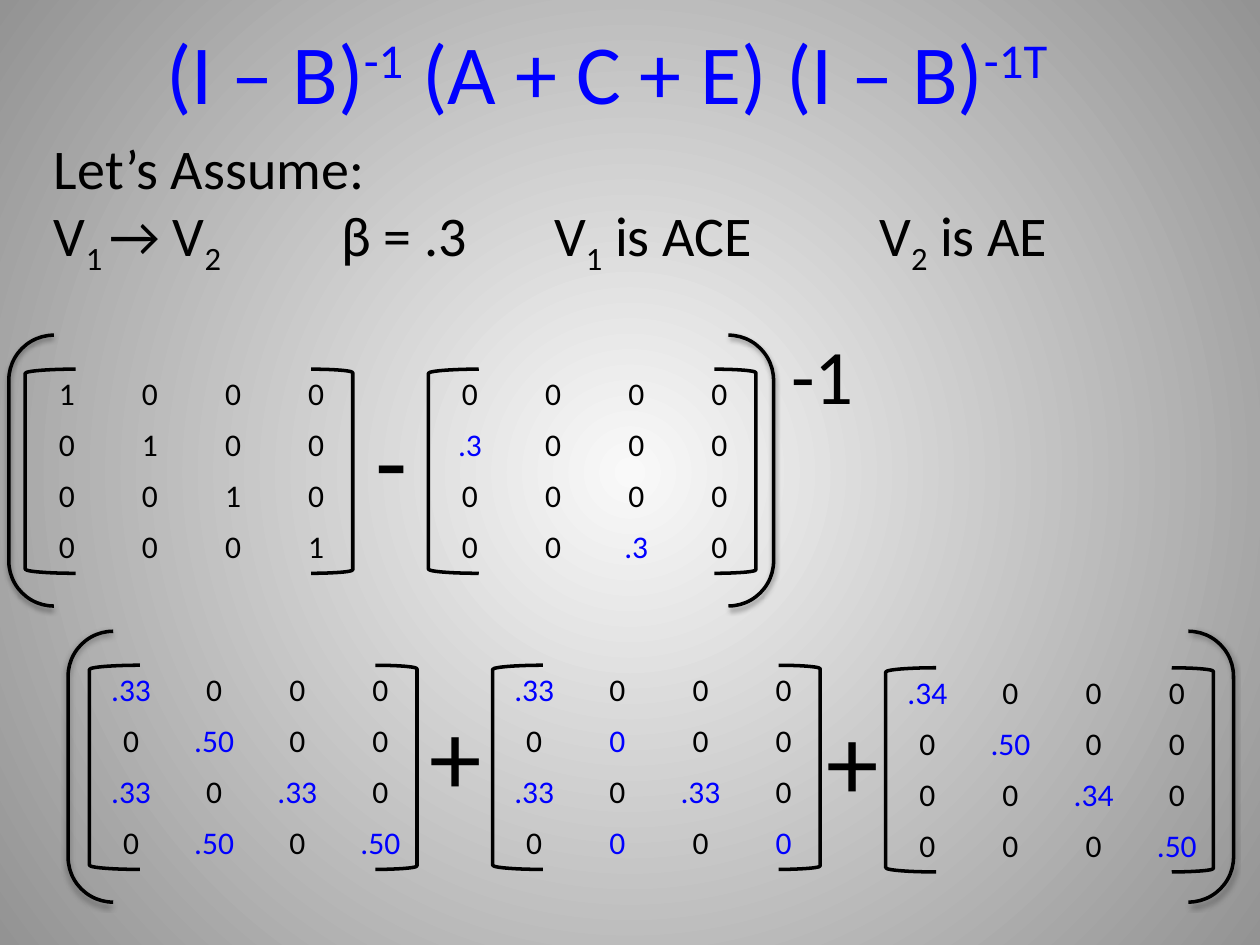
"""Build a slide of variance matrices for a two-variable causal model."""
import lxml.etree
import pptx
import pptx.dml.color
import pptx.enum.shapes
import pptx.enum.text
import pptx.oxml
import pptx.oxml.ns
import pptx.util

Inches = pptx.util.Inches
SHAPES = pptx.enum.shapes.MSO_SHAPE
COLORS = {"ink": "000000", "accent": "0000FF", "center": "F9F9F9", "edge": "939393"}
FONT = "Calibri"
NAMESPACE = pptx.oxml.ns.nsdecls("a", "p")
NO_GRID_STYLE = "{2D5ABB26-0587-4C30-8999-92F81FD0307C}"
CELL_WIDTH, MATRIX_HEIGHT = 0.66, 1.62
LEFT_BRACKET_WIDTH, RIGHT_BRACKET_WIDTH, RIGHT_BRACKET_OFFSET = 0.4, 0.33, 2.27
PAIR_HEIGHT = 2.15
SUPER, SUB = 30, -25

TITLE = [[("(I – B)", 0), ("-1", SUPER), (" (A + C + E) (I – B)", 0), ("-1T", SUPER)]]
ASSUMPTIONS = [
    [("Let’s Assume:", 0)],
    [("V", 0), ("1 ", SUB), ("→ V", 0), ("2", SUB), ("\tβ = .3\tV", 0), ("1", SUB),
     (" is ACE\tV", 0), ("2", SUB), (" is AE", 0)],
]
ASSUMPTION_TABS = (2.28, 3.97, 6.55)

MATRICES = [
    {"at": (0.2, 2.93), "rows": ["1 0 0 0", "0 1 0 0", "0 0 1 0", "0 0 0 1"]},
    {"at": (3.4, 2.93), "rows": ["0 0 0 0", ".3 0 0 0", "0 0 0 0", "0 0 .3 0"]},
    {"at": (0.71, 5.28), "rows": [".33 0 0 0", "0 .50 0 0", ".33 0 .33 0", "0 .50 0 .50"]},
    {"at": (3.91, 5.28), "rows": [".33 0 0 0", "0 0 0 0", ".33 0 .33 0", "0 0 0 0"],
     "blue_zeros": {(1, 1), (3, 1), (3, 3)}},
    {"at": (7.03, 5.3), "rows": [".34 0 0 0", "0 .50 0 0", "0 0 .34 0", "0 0 0 .50"]},
]
OPERATORS = [
    ("-", (2.88, 3.08, 0.46, 1.11), 60),
    ("-1", (6.18, 2.55, 0.7, 0.84), 44),
    ("+", (3.31, 5.43, 0.62, 1.11), 60),
    ("+", (6.46, 5.47, 0.62, 1.11), 60),
]
BRACKET_PAIRS = [(0.07, 2.66, 6.07), (0.54, 5.01, 9.25)]


def rgb(name):
    return pptx.dml.color.RGBColor.from_string(COLORS[name])


def write_text(frame, paragraphs, size=18, color="ink", align=None, tabs=()):
    for index, pieces in enumerate(paragraphs):
        para = frame.add_paragraph() if index else frame.paragraphs[0]
        para.alignment = align
        if tabs:
            tab_list = lxml.etree.SubElement(
                para._p.get_or_add_pPr(), pptx.oxml.ns.qn("a:tabLst"))
            for tab in tabs:
                lxml.etree.SubElement(tab_list, pptx.oxml.ns.qn("a:tab"),
                                      pos=str(Inches(tab)), algn="l")
        for text, baseline in pieces:
            span = para.add_run()
            span.text = text
            span.font.name = FONT
            span.font.size = pptx.util.Pt(size)
            span.font.color.rgb = rgb(color)
            if baseline:
                span.font._element.set("baseline", str(baseline * 1000))


def add_text(page, at, paragraphs, wrap=False, **style):
    box = page.shapes.add_textbox(*map(Inches, at))
    box.text_frame.word_wrap = wrap
    box.text_frame.auto_size = pptx.enum.text.MSO_AUTO_SIZE.SHAPE_TO_FIT_TEXT
    write_text(box.text_frame, paragraphs, **style)


def add_bracket(page, kind, at, shadow=False):
    bracket = page.shapes.add_shape(kind, *map(Inches, at))
    bracket.fill.background()
    bracket.line.color.rgb = rgb("ink")
    bracket.line.width = pptx.util.Pt(2)
    bracket.shadow.inherit = False
    if shadow:
        effects = bracket._element.spPr.find(pptx.oxml.ns.qn("a:effectLst"))
        effects.append(pptx.oxml.parse_xml(
            f'<a:outerShdw {NAMESPACE} blurRad="40000" dist="20000" dir="5400000" '
            f'rotWithShape="0"><a:srgbClr val="{COLORS["ink"]}">'
            '<a:alpha val="38000"/></a:srgbClr></a:outerShdw>'))


def add_matrix(page, at, rows, blue_zeros=frozenset()):
    left, top = at
    values = [row.split() for row in rows]
    count = len(values)
    table = page.shapes.add_table(
        count, count, Inches(left), Inches(top),
        Inches(CELL_WIDTH * count), Inches(MATRIX_HEIGHT)).table
    table.first_row = table.horz_banding = False
    table._tbl.tblPr.find(pptx.oxml.ns.qn("a:tableStyleId")).text = NO_GRID_STYLE
    for row, row_values in enumerate(values):
        for column, value in enumerate(row_values):
            cell = table.cell(row, column)
            cell.fill.background()
            accented = value.startswith(".") or (row, column) in blue_zeros
            write_text(cell.text_frame, [[(value, 0)]],
                       color="accent" if accented else "ink",
                       align=pptx.enum.text.PP_ALIGN.CENTER)
    add_bracket(page, SHAPES.LEFT_BRACKET,
                (left, top, LEFT_BRACKET_WIDTH, MATRIX_HEIGHT))
    add_bracket(page, SHAPES.RIGHT_BRACKET,
                (left + RIGHT_BRACKET_OFFSET, top, RIGHT_BRACKET_WIDTH, MATRIX_HEIGHT))


def set_background(page):
    page._element.cSld.insert(0, pptx.oxml.parse_xml(
        f'<p:bg {NAMESPACE}><p:bgPr><a:gradFill rotWithShape="1"><a:gsLst>'
        f'<a:gs pos="0"><a:srgbClr val="{COLORS["center"]}"/></a:gs>'
        f'<a:gs pos="100000"><a:srgbClr val="{COLORS["edge"]}"/></a:gs></a:gsLst>'
        '<a:path path="circle"><a:fillToRect l="50000" t="50000" r="50000" b="50000"/>'
        '</a:path></a:gradFill><a:effectLst/></p:bgPr></p:bg>'))


def main():
    deck = pptx.Presentation()
    deck.slide_width, deck.slide_height = Inches(10), Inches(7.5)
    page = deck.slides.add_slide(deck.slide_layouts[6])
    set_background(page)
    add_text(page, (1.22, 0.11, 7.39, 0.91), TITLE, size=48, color="accent")
    for matrix in MATRICES:
        add_matrix(page, **matrix)
    for left, top, width in BRACKET_PAIRS:
        add_bracket(page, SHAPES.DOUBLE_BRACKET, (left, top, width, PAIR_HEIGHT), shadow=True)
    for symbol, at, size in OPERATORS:
        add_text(page, at, [[(symbol, 0)]], size=size)
    add_text(page, (0.33, 1.01, 8.41, 1.38), ASSUMPTIONS, wrap=True, size=32,
             tabs=ASSUMPTION_TABS)
    deck.save("out.pptx")


if __name__ == "__main__":
    main()
